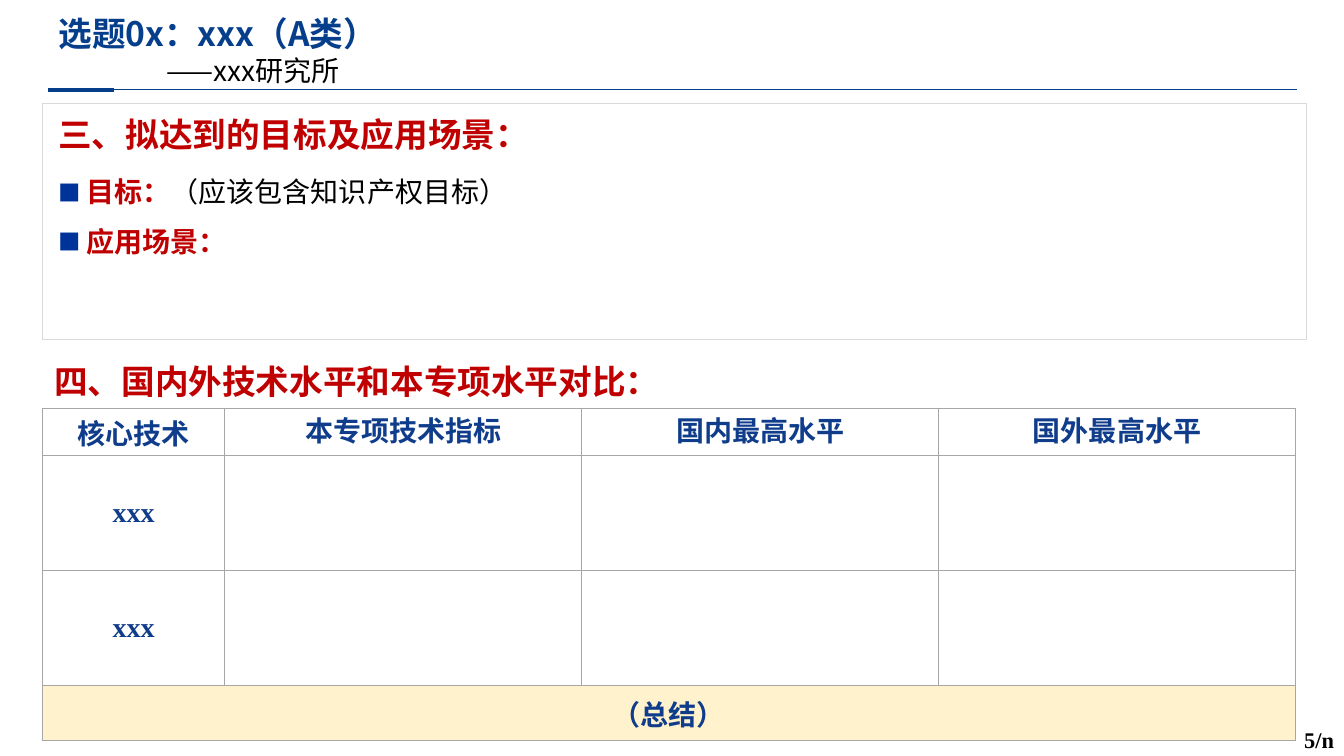
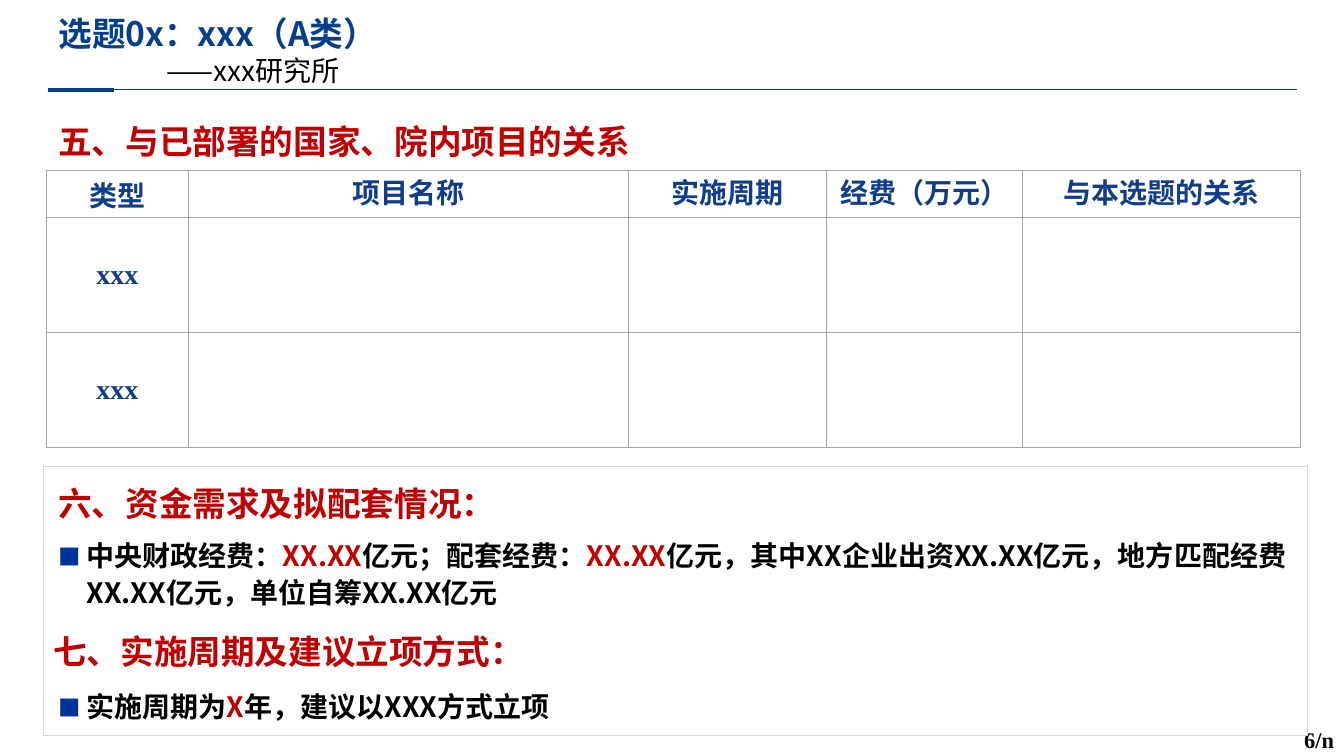
"""Build two topic-proposal slides: goals with a comparison, and related projects with funding."""
from lxml import etree
from pptx import Presentation
from pptx import util as u
from pptx.dml.color import RGBColor
from pptx.enum import shapes, text
from pptx.oxml.ns import qn

COLORS = {"title": "053E8B", "red": "C00000", "black": "000000", "bullet": "003399",
          "table": "103D8B", "grid": "A6A6A6", "frame": "D9D9D9", "white": "FFFFFF",
          "summary": "FFF2CC"}
SANS, SERIF = "Noto Sans CJK SC", "Times New Roman"
LEFT = 0.48
TITLE, INSTITUTE = "选题0x：xxx（A类）", "——xxx研究所"
RULES = [(0.72, 12.86, 0.5), (LEFT, 1.13, 3)]

SLIDES = [
    {"page": "5/n",
     "panel": (0.42, 1.03, 12.54, 2.34),
     "headings": [(LEFT, 1.06, "三、拟达到的目标及应用场景："),
                  (0.44, 3.51, "四、国内外技术水平和本专项水平对比：")],
     "bullets": [(1.65, 0.94, [
         [("目标：", "red", True), ("（应该包含知识产权目标）", "black", False)],
         [("应用场景：", "red", True)]])],
     "table": {"at": (0.42, 4.05),
               "columns": [1.81, 3.54, 3.54, 3.54],
               "heights": [0.47, 1.14, 1.14, 0.55],
               "rows": [["核心技术", "本专项技术指标", "国内最高水平", "国外最高水平"],
                        ["xxx"], ["xxx"]],
               "summary": "（总结）"}},
    {"page": "6/n",
     "panel": (0.43, 4.63, 12.54, 2.67),
     "headings": [(LEFT, 1.13, "五、与已部署的国家、院内项目的关系"),
                  (LEFT, 4.72, "六、资金需求及拟配套情况："),
                  (0.43, 6.19, "七、实施周期及建议立项方式：")],
     "bullets": [
         (5.26, 0.84, [[
             ("中央财政经费：", "black", True), ("XX.XX", "red", True),
             ("亿元；配套经费：", "black", True), ("XX.XX", "red", True),
             ("亿元，其中XX企业出资XX.XX亿元，地方匹配经费XX.XX亿元，单位自筹XX.XX亿元",
              "black", True)]]),
         (6.76, 0.47, [[
             ("实施周期为", "black", True), ("X", "red", True),
             ("年，建议以XXX方式立项", "black", True)]])],
     "table": {"at": (0.46, 1.69),
               "columns": [1.41, 4.36, 1.97, 1.94, 2.76],
               "heights": [0.47, 1.14, 1.14],
               "rows": [["类型", "项目名称", "实施周期", "经费（万元）", "与本选题的关系"],
                        ["xxx"], ["xxx"]]}},
]


def rgb(name):
    return RGBColor.from_string(COLORS[name])


def inches(values):
    return [u.Inches(value) for value in values]


def write(paragraph, runs, size=20, font=SANS, color="black", bold=True,
          align=text.PP_ALIGN.LEFT, line=None, after=None, indent=0, bullet=False):
    """Fill a paragraph with a string or with (text, color, bold) runs."""
    paragraph.alignment = align
    if line:
        paragraph.line_spacing = u.Pt(line)
    if after:
        paragraph.space_after = u.Pt(after)
    properties = paragraph._p.get_or_add_pPr()
    properties.set("marL", str(u.Inches(indent)))
    properties.set("indent", str(-u.Inches(indent) if bullet else 0))
    if bullet:
        tint = etree.SubElement(properties, qn("a:buClr"))
        etree.SubElement(tint, qn("a:srgbClr"), val=COLORS["bullet"])
        etree.SubElement(properties, qn("a:buSzPct"), val="80000")
        etree.SubElement(properties, qn("a:buFont"), typeface=SANS)
        etree.SubElement(properties, qn("a:buChar"), char="■")
    for words, tone, heavy in [(runs, color, bold)] if isinstance(runs, str) else runs:
        run = paragraph.add_run()
        run.text = words
        run.font.size, run.font.bold, run.font.name = u.Pt(size), heavy, font
        run.font.color.rgb = rgb(tone)
        etree.SubElement(run._r.get_or_add_rPr(), qn("a:ea"), typeface=SANS)


def prepare(frame, anchor):
    frame.word_wrap, frame.auto_size = True, text.MSO_AUTO_SIZE.NONE
    frame.vertical_anchor = anchor


def add_text(slide, box, paragraphs, anchor=text.MSO_ANCHOR.TOP, **style):
    frame = slide.shapes.add_textbox(*inches(box)).text_frame
    prepare(frame, anchor)
    for index, runs in enumerate(paragraphs):
        write(frame.add_paragraph() if index else frame.paragraphs[0], runs, **style)


def add_header(slide, page):
    title = slide.shapes.title
    title.left, title.top, title.width, title.height = inches((LEFT, 0.05, 10.47, 0.84))
    prepare(title.text_frame, text.MSO_ANCHOR.TOP)
    write(title.text_frame.paragraphs[0], TITLE, size=24, color="title", line=31)
    write(title.text_frame.add_paragraph(), INSTITUTE, bold=False, line=24, indent=1.07)
    for start, end, weight in RULES:
        rule = slide.shapes.add_connector(shapes.MSO_CONNECTOR.STRAIGHT,
                                          *inches((start, 0.89, end, 0.89)))
        rule.line.color.rgb, rule.line.width = rgb("title"), u.Pt(weight)
        etree.SubElement(rule._element.spPr, qn("a:effectLst"))
    add_text(slide, (12.6, 7.15, 0.73, 0.44), [page], size=16, font=SERIF,
             align=text.PP_ALIGN.RIGHT)


def add_panel(slide, box):
    panel = slide.shapes.add_shape(shapes.MSO_SHAPE.RECTANGLE, *inches(box))
    panel.shadow.inherit = False
    panel.fill.solid()
    panel.fill.fore_color.rgb = rgb("white")
    panel.line.color.rgb, panel.line.width = rgb("frame"), u.Pt(1)


def format_cell(cell, fill):
    properties = cell._tc.get_or_add_tcPr()
    for side in ("lnL", "lnR", "lnT", "lnB"):
        border = etree.SubElement(properties, qn(f"a:{side}"), w=str(u.Pt(1)))
        paint = etree.SubElement(border, qn("a:solidFill"))
        etree.SubElement(paint, qn("a:srgbClr"), val=COLORS["grid"])
    cell.fill.solid()
    cell.fill.fore_color.rgb = rgb(fill)
    cell.margin_left = cell.margin_right = u.Inches(0.07)
    cell.margin_top = cell.margin_bottom = 0
    cell.vertical_anchor = text.MSO_ANCHOR.MIDDLE


def add_grid(slide, at, columns, heights, rows, summary=None):
    size = (sum(columns), sum(heights))
    table = slide.shapes.add_table(len(heights), len(columns), *inches(at + size)).table
    table.first_row = table.horz_banding = False
    for column, width in zip(table.columns, columns):
        column.width = u.Inches(width)
    for row, height in zip(table.rows, heights):
        row.height = u.Inches(height)
    for index, row in enumerate(table.rows):
        for cell in row.cells:
            format_cell(cell, "white" if index < len(rows) else "summary")
    style = {"color": "table", "align": text.PP_ALIGN.CENTER}
    for r, labels in enumerate(rows):
        for c, label in enumerate(labels):
            write(table.cell(r, c).text_frame.paragraphs[0], label,
                  font=SERIF if r else SANS, line=25 if c else None, **style)
    if summary:
        first = table.cell(len(rows), 0)
        first.merge(table.cell(len(rows), len(columns) - 1))
        write(first.text_frame.paragraphs[0], summary, **style)


def main():
    deck = Presentation()
    deck.slide_width, deck.slide_height = inches((13.33, 7.5))
    for content in SLIDES:
        slide = deck.slides.add_slide(deck.slide_layouts[5])
        add_header(slide, content["page"])
        add_panel(slide, content["panel"])
        for left, top, heading in content["headings"]:
            add_text(slide, (left, top, 11.78, 0.5), [heading], size=24, color="red",
                     line=32, anchor=text.MSO_ANCHOR.MIDDLE)
        for top, height, items in content["bullets"]:
            add_text(slide, (LEFT, top, 12.44, height), items, line=26.5, after=9,
                     indent=0.28, bullet=True)
        add_grid(slide, **content["table"])
    deck.save("out.pptx")


if __name__ == "__main__":
    main()
